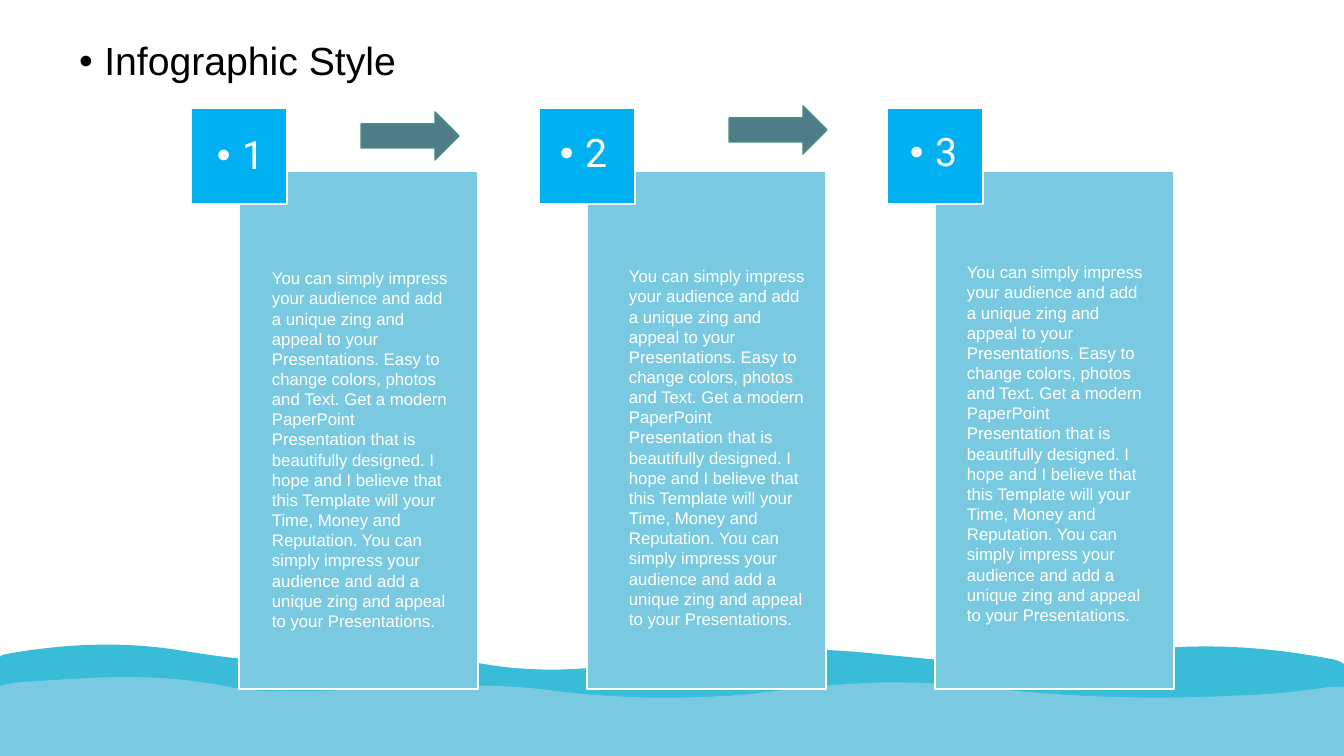
from dataclasses import dataclass

from lxml.etree import SubElement
from pptx import Presentation
from pptx.dml.color import RGBColor
from pptx.enum.shapes import MSO_SHAPE as Preset
from pptx.enum.text import MSO_ANCHOR as Anchor, PP_ALIGN as Align
from pptx.oxml.ns import qn
from pptx.shapes.base import BaseShape
from pptx.slide import Slide
from pptx.text.text import TextFrame
from pptx.util import Emu, Pt

SLIDE_WIDTH, SLIDE_HEIGHT = 1344, 756
EMU_PER_PX = 12192000 / SLIDE_WIDTH
CURVE_STEPS = 10

WHITE = RGBColor(0xFF, 0xFF, 0xFF)
BLACK = RGBColor(0x00, 0x00, 0x00)
DEEP_WATER = RGBColor(0x38, 0xBC, 0xD7)
LIGHT_WATER = RGBColor(0x79, 0xCA, 0xE0)
BADGE_BLUE = RGBColor(0x00, 0xB0, 0xF0)
ARROW_FILL = RGBColor(0x50, 0x7C, 0x89)
ARROW_LINE = RGBColor(0x40, 0x90, 0x7C)

Point = tuple[float, float]


@dataclass(frozen=True)
class Box:
    left: int
    top: int
    width: int
    height: int

    def emu(self) -> tuple[Emu, Emu, Emu, Emu]:
        return px(self.left), px(self.top), px(self.width), px(self.height)


@dataclass(frozen=True)
class Wave:
    color: RGBColor
    bottom: int
    crest: list[Point]


@dataclass(frozen=True)
class Step:
    number: str
    number_box: Box
    body_box: Box


BODY = (
    "You can simply impress your audience and add a unique zing and appeal to your "
    "Presentations. Easy to change colors, photos and Text. Get a modern PaperPoint "
    "Presentation that is beautifully designed. I hope and I believe that this Template "
    "will your Time, Money and Reputation. You can simply impress your audience and add "
    "a unique zing and appeal to your Presentations."
)

TITLE_BOX = Box(69, 37, 1275, 80)
FIRST_BADGE = Box(191, 108, 96, 96)
FIRST_PANEL = Box(239, 171, 239, 518)
STEP_PITCH = 348

STEPS = [
    Step("1", Box(207, 131, 102, 80), Box(262, 263, 196, 377)),
    Step("2", Box(550, 129, 454, 80), Box(619, 261, 196, 377)),
    Step("3", Box(900, 128, 444, 80), Box(957, 257, 196, 377)),
]

ARROWS = [Box(361, 112, 98, 48), Box(729, 106, 98, 48)]

WAVES = [
    Wave(DEEP_WATER, 699, [
        (0, 657), (2, 654), (8, 654), (12, 653), (71, 643), (129, 641), (190, 652),
        (221, 657), (254, 661), (290, 661), (311, 660), (332, 658), (352, 656),
        (392, 651), (431, 652), (468, 661), (518, 672), (571, 672), (623, 664),
        (657, 659), (690, 654), (726, 651), (780, 647), (835, 649), (888, 655),
        (929, 659), (972, 664), (1015, 664), (1043, 664), (1070, 661), (1097, 657),
        (1115, 654), (1132, 651), (1151, 649), (1215, 643), (1274, 648), (1331, 659),
        (1337, 660), (1341, 662), (1344, 664),
    ]),
    Wave(LIGHT_WATER, SLIDE_HEIGHT, [
        (0, 686), (11, 682), (26, 682), (40, 681), (85, 678), (129, 675), (175, 679),
        (193, 681), (209, 683), (225, 686), (242, 690), (260, 691), (280, 691),
        (322, 692), (362, 689), (403, 687), (452, 685), (500, 684), (548, 690),
        (615, 699), (682, 700), (751, 694), (789, 689), (827, 685), (866, 683),
        (908, 681), (949, 684), (989, 688), (1075, 698), (1161, 700), (1249, 695),
        (1276, 694), (1302, 691), (1329, 687), (1334, 687), (1339, 686), (1344, 687),
    ]),
]


def px(length: float) -> Emu:
    return Emu(round(length * EMU_PER_PX))


def curve_point(controls: list[Point], t: float) -> Point:
    weights = ((1 - t) ** 3, 3 * t * (1 - t) ** 2, 3 * t * t * (1 - t), t ** 3)
    return (
        sum(weight * x for weight, (x, _) in zip(weights, controls)),
        sum(weight * y for weight, (_, y) in zip(weights, controls)),
    )


def paint(shape: BaseShape, fill: RGBColor, line: RGBColor | None) -> None:
    shape.shadow.inherit = False
    shape.fill.solid()
    shape.fill.fore_color.rgb = fill
    if line is None:
        shape.line.fill.background()
    else:
        shape.line.color.rgb = line
        shape.line.width = Pt(1)


def draw_wave(slide: Slide, wave: Wave) -> None:
    outline = [wave.crest[0]]
    for start in range(0, len(wave.crest) - 1, 3):
        controls = wave.crest[start:start + 4]
        outline += [curve_point(controls, step / CURVE_STEPS)
                    for step in range(1, CURVE_STEPS + 1)]
    outline += [(SLIDE_WIDTH, wave.bottom), (0, wave.bottom)]
    points = [(px(x), px(y)) for x, y in outline]
    builder = slide.shapes.build_freeform(*points[0])
    builder.add_line_segments(points[1:], close=True)
    paint(builder.convert_to_shape(), wave.color, None)


def draw_shape(slide: Slide, preset: Preset, box: Box, fill: RGBColor, line: RGBColor) -> None:
    paint(slide.shapes.add_shape(preset, *box.emu()), fill, line)


def write(frame: TextFrame, text: str, size: int, font: str, color: RGBColor,
          bullet: bool) -> None:
    frame.word_wrap = True
    frame.vertical_anchor = Anchor.TOP
    frame.text = text
    para = frame.paragraphs[0]
    para.alignment = Align.LEFT
    if bullet:
        para.line_spacing = 0.9
        properties = para._p.get_or_add_pPr()
        properties.set("marL", "228600")
        properties.set("indent", "-228600")
        SubElement(properties, qn("a:buFont")).set("typeface", "Arial")
        SubElement(properties, qn("a:buChar")).set("char", "•")
    for span in para.runs:
        span.font.size = Pt(size)
        span.font.name = font
        span.font.color.rgb = color


def draw_text(slide: Slide, box: Box, text: str, size: int, font: str, bullet: bool) -> None:
    frame = slide.shapes.add_textbox(*box.emu()).text_frame
    write(frame, text, size, font, WHITE, bullet)


def place_title(slide: Slide) -> None:
    title = slide.shapes.title
    title.left, title.top, title.width, title.height = TITLE_BOX.emu()
    write(title.text_frame, "Infographic Style", 28, "Arial", BLACK, True)


def shifted(box: Box, index: int) -> Box:
    return Box(box.left + index * STEP_PITCH, box.top, box.width, box.height)


def main() -> None:
    deck = Presentation()
    deck.slide_width, deck.slide_height = px(SLIDE_WIDTH), px(SLIDE_HEIGHT)
    page = deck.slides.add_slide(deck.slide_layouts.get_by_name("Title Only"))
    for wave in WAVES:
        draw_wave(page, wave)
    place_title(page)
    for index, step in enumerate(STEPS):
        draw_shape(page, Preset.RECTANGLE, shifted(FIRST_PANEL, index), LIGHT_WATER, WHITE)
        draw_shape(page, Preset.RECTANGLE, shifted(FIRST_BADGE, index), BADGE_BLUE, WHITE)
        draw_text(page, step.body_box, BODY, 12, "Arial", False)
        draw_text(page, step.number_box, step.number, 28, "Roboto", True)
    for arrow in ARROWS:
        draw_shape(page, Preset.RIGHT_ARROW, arrow, ARROW_FILL, ARROW_LINE)
    deck.save("out.pptx")


if __name__ == "__main__":
    main()
